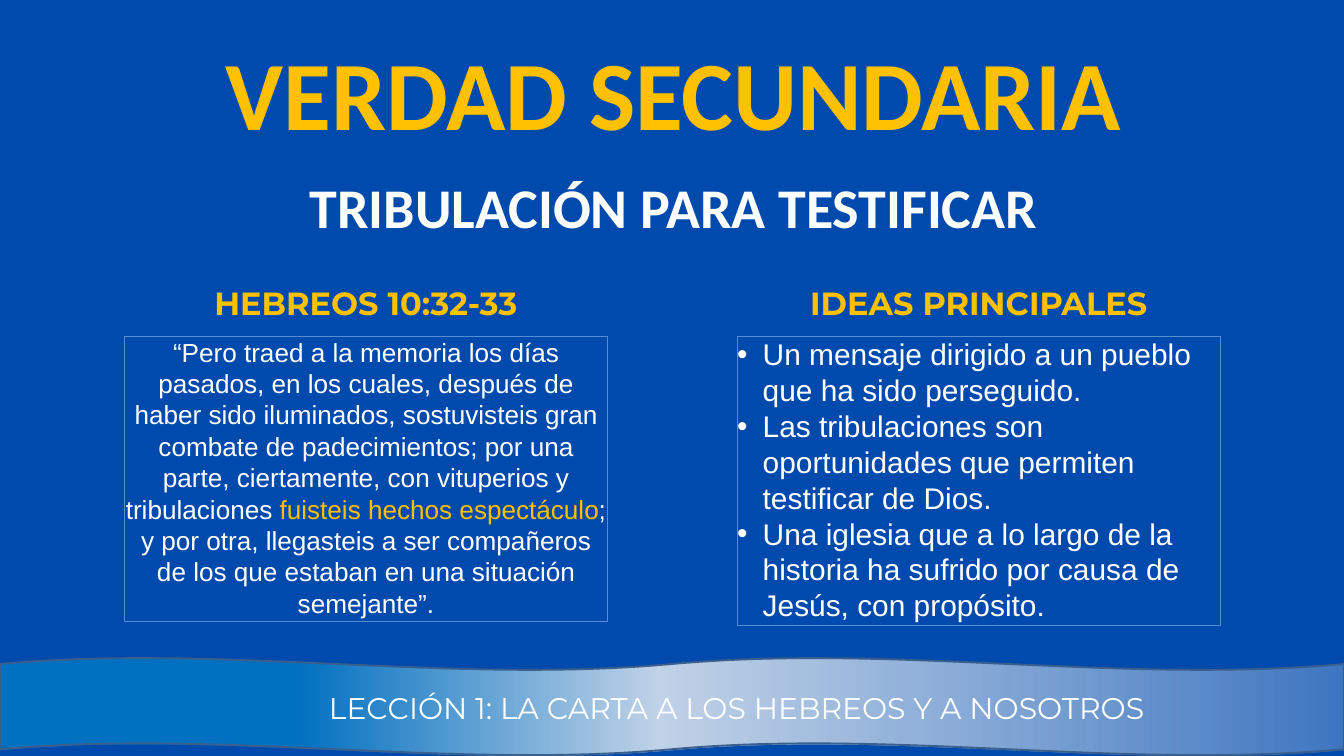
import dataclasses

import lxml.etree
import pptx
import pptx.dml.color
import pptx.enum.shapes
import pptx.enum.text
import pptx.oxml.ns
import pptx.util

Inches = pptx.util.Inches
Pt = pptx.util.Pt
Align = pptx.enum.text.PP_ALIGN
Shape = pptx.enum.shapes.MSO_SHAPE
qn = pptx.oxml.ns.qn


@dataclasses.dataclass(frozen=True)
class Theme:
    background: str = "004AAD"
    gold: str = "FFC000"
    white: str = "FFFFFF"
    panel_line: str = "558ED5"
    wave_line: str = "3A5F8C"
    # position %, colour, opacity %
    wave_stops: tuple = ((22, "0070C0", 100), (49, "C0D2E7", 100), (100, "CAD9EB", 30))
    title_font: str = "Calibri"
    heading_font: str = "Montserrat"
    body_font: str = "Arial"
    title_size: float = 105
    subtitle_size: float = 60
    heading_size: float = 34.3
    verse_size: float = 28
    ideas_size: float = 32
    footer_size: float = 32
    title_spacing: float = 141.9
    heading_spacing: float = 41.2


THEME = Theme()

VERSE = (
    ("“Pero traed a la memoria los días pasados, en los cuales, después de haber sido "
     "iluminados, sostuvisteis gran combate de padecimientos; por una parte, ciertamente, "
     "con vituperios y tribulaciones ", THEME.white),
    ("fuisteis hechos espectáculo", THEME.gold),
    ("; y por otra, llegasteis a ser compañeros de los que estaban en una situación "
     "semejante”.", THEME.white),
)
IDEAS = (
    "Un mensaje dirigido a un pueblo que ha sido perseguido.",
    "Las tribulaciones son oportunidades que permiten testificar de Dios.",
    "Una iglesia que a lo largo de la historia ha sufrido por causa de Jesús, con propósito.",
)


def rgb(value):
    return pptx.dml.color.RGBColor.from_string(value)


def style_paragraph(paragraph, font, size, color=None, bold=False, align=Align.CENTER,
                    spacing=None):
    paragraph.alignment = align
    paragraph.font.name = font
    paragraph.font.size = Pt(size)
    paragraph.font.bold = bold
    if color:
        paragraph.font.color.rgb = rgb(color)
    if spacing:
        paragraph.line_spacing = Pt(spacing)


def prepare_frame(frame):
    frame.word_wrap = True
    frame.auto_size = pptx.enum.text.MSO_AUTO_SIZE.SHAPE_TO_FIT_TEXT
    frame.vertical_anchor = pptx.enum.text.MSO_ANCHOR.TOP
    frame.margin_left = frame.margin_top = frame.margin_right = frame.margin_bottom = 0
    return frame


def add_line_of_text(slide, box, text, font, size, color, bold=True, spacing=None):
    frame = prepare_frame(slide.shapes.add_textbox(*map(Inches, box)).text_frame)
    frame.text = text
    style_paragraph(frame.paragraphs[0], font, size, color, bold, spacing=spacing)


def add_outline(slide, preset, box, color, width):
    shape = slide.shapes.add_shape(preset, *map(Inches, box))
    shape.shadow.inherit = False
    shape.line.color.rgb = rgb(color)
    shape.line.width = Pt(width)
    return shape


def add_bullet(paragraph, indent):
    properties = paragraph._p.get_or_add_pPr()
    properties.set("marL", str(Inches(indent)))
    properties.set("indent", str(-Inches(indent)))
    lxml.etree.SubElement(properties, qn("a:buFont"), typeface=THEME.body_font)
    lxml.etree.SubElement(properties, qn("a:buChar"), char="•")


def add_header(slide, left, top):
    add_line_of_text(slide, (left, top, 13.76, 1.88), "VERDAD SECUNDARIA", THEME.title_font,
                     THEME.title_size, THEME.gold, spacing=THEME.title_spacing)
    add_line_of_text(slide, (left + 0.45, top + 1.33, 12.85, 1.72),
                     "TRIBULACIÓN PARA TESTIFICAR", THEME.title_font,
                     THEME.subtitle_size, THEME.white, spacing=THEME.title_spacing)


def add_panel(slide, box, heading):
    """Places a heading over an outlined panel and returns the panel's text frame."""
    left, top, width, height = box
    add_line_of_text(slide, (left, top, width, 0.58), heading, THEME.heading_font,
                     THEME.heading_size, THEME.gold, spacing=THEME.heading_spacing)
    panel = add_outline(slide, Shape.RECTANGLE, (left, top + 0.78, width, height - 0.78),
                        THEME.panel_line, 0.75)
    panel.fill.background()
    return prepare_frame(panel.text_frame)


def add_verse(slide, box):
    paragraph = add_panel(slide, box, "HEBREOS 10:32-33").paragraphs[0]
    style_paragraph(paragraph, THEME.body_font, THEME.verse_size)
    for text, color in VERSE:
        run = paragraph.add_run()
        run.text = text
        run.font.color.rgb = rgb(color)


def add_ideas(slide, box):
    frame = add_panel(slide, box, "IDEAS PRINCIPALES")
    frame.text = "\n".join(IDEAS)
    for paragraph in frame.paragraphs:
        style_paragraph(paragraph, THEME.body_font, THEME.ideas_size, THEME.white,
                        align=Align.LEFT)
        add_bullet(paragraph, 0.38)


def add_footer(slide, box):
    left, top, width, height = box
    wave = add_outline(slide, Shape.DOUBLE_WAVE, box, THEME.wave_line, 2)
    wave.fill.gradient()
    wave.fill.gradient_angle = 0

    # Three gradient stops, the last one see-through
    stops = wave._element.spPr.find(".//" + qn("a:gsLst"))
    for stop in list(stops):
        stops.remove(stop)
    for position, color, opacity in THEME.wave_stops:
        stop = lxml.etree.SubElement(stops, qn("a:gs"), pos=str(position * 1000))
        tint = lxml.etree.SubElement(stop, qn("a:srgbClr"), val=color)
        if opacity < 100:
            lxml.etree.SubElement(tint, qn("a:alpha"), val=str(opacity * 1000))

    add_line_of_text(slide, (left + 3.09, top + 0.47, 15.75, 0.54),
                     "LECCIÓN 1: LA CARTA A LOS HEBREOS Y A NOSOTROS",
                     THEME.heading_font, THEME.footer_size, THEME.white, bold=False)


def main():
    deck = pptx.Presentation()
    deck.slide_width, deck.slide_height = Inches(20), Inches(11.25)
    slide = deck.slides.add_slide(deck.slide_layouts[6])
    slide.background.fill.solid()
    slide.background.fill.fore_color.rgb = rgb(THEME.background)

    add_header(slide, 3.15, 0.26)
    add_verse(slide, (1.85, 4.22, 7.19, 5.02))
    add_ideas(slide, (10.97, 4.22, 7.19, 5.09))
    add_footer(slide, (0, 9.79, 20, 1.45))
    deck.save("out.pptx")


if __name__ == "__main__":
    main()
